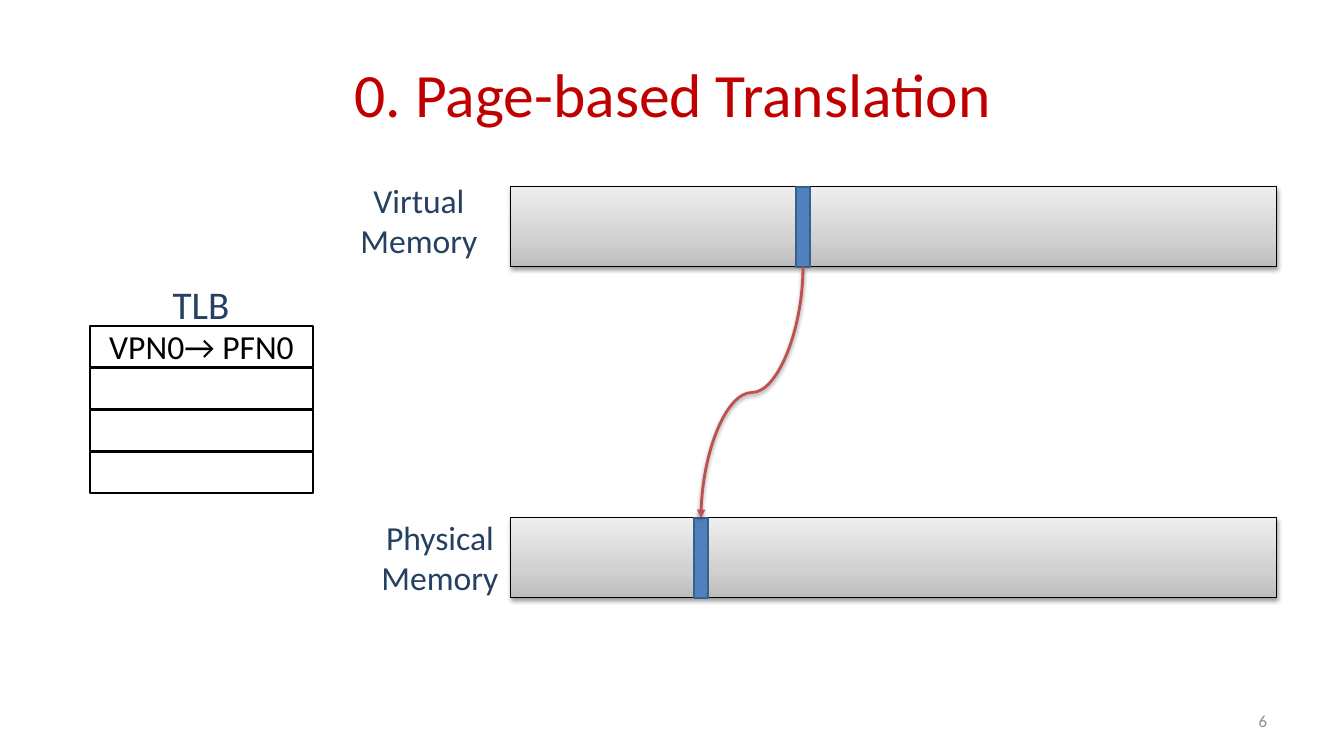
from copy import deepcopy

from lxml.etree import SubElement
from pptx import Presentation
from pptx.dml.color import RGBColor
from pptx.enum.shapes import MSO_CONNECTOR, MSO_SHAPE
from pptx.enum.text import MSO_ANCHOR, MSO_AUTO_SIZE, PP_ALIGN
from pptx.oxml.ns import qn
from pptx.util import Emu, Pt

EMU_PER_PX = 914400 / 100.8
FONT = "Calibri"
RED = RGBColor(0xC0, 0x00, 0x00)
NAVY = RGBColor(0x25, 0x40, 0x61)
GRAY = RGBColor(0x8C, 0x8C, 0x8C)
BLACK = RGBColor(0x00, 0x00, 0x00)
WHITE = RGBColor(0xFF, 0xFF, 0xFF)
BLUE = RGBColor(0x4F, 0x81, 0xBD)
BLUE_EDGE = RGBColor(0x3A, 0x5F, 0x8C)
ARROW_RED = RGBColor(0xC0, 0x50, 0x4D)
MEMORY_STOPS = [
    (0, RGBColor(0xBD, 0xBD, 0xBD)),
    (0.35, RGBColor(0xD1, 0xD1, 0xD1)),
    (1, RGBColor(0xEE, 0xEE, 0xEE)),
]


def px(*lengths):
    return [Emu(round(length * EMU_PER_PX)) for length in lengths]


class TranslationSlide:
    """Draws the parts of an address translation diagram on one slide."""

    def __init__(self, deck):
        self.slide = deck.slides.add_slide(deck.slide_layouts[5])
        self.shapes = self.slide.shapes

    def add_words(self, holder, text, size, color, align=PP_ALIGN.CENTER, anchor=MSO_ANCHOR.MIDDLE):
        frame = holder.text_frame
        frame.word_wrap = True
        frame.auto_size = MSO_AUTO_SIZE.NONE
        frame.vertical_anchor = anchor
        paragraph = frame.paragraphs[0]
        paragraph.alignment = align
        run = paragraph.add_run()
        run.text = text
        run.font.name = FONT
        run.font.size = Pt(size)
        run.font.color.rgb = color

    def title(self, text, *box):
        heading = self.shapes.title
        heading.left, heading.top, heading.width, heading.height = px(*box)
        self.add_words(heading, text, 44, RED)

    def label(self, text, box, size=24, color=NAVY, **layout):
        self.add_words(self.shapes.add_textbox(*px(*box)), text, size, color, **layout)

    def block(self, box, fill, edge, weight=2):
        block = self.shapes.add_shape(MSO_SHAPE.RECTANGLE, *px(*box))
        block.shadow.inherit = False
        block.fill.solid()
        block.fill.fore_color.rgb = fill
        block.line.color.rgb = edge
        block.line.width = Pt(weight)
        return block

    def memory(self, *box):
        bar = self.block(box, WHITE, BLACK, 0.75)
        bar.fill.gradient()
        bar.fill.gradient_angle = 90
        properties = bar._element.spPr
        stop_list = properties.find(qn("a:gradFill")).find(qn("a:gsLst"))
        stop_list.append(deepcopy(stop_list[0]))
        for stop, (position, color) in zip(bar.fill.gradient_stops, MEMORY_STOPS):
            stop.position = position
            stop.color.rgb = color
        self.cast_shadow(properties.find(qn("a:effectLst")))

    def cast_shadow(self, effects):
        shadow = SubElement(effects, qn("a:outerShdw"), blurRad=str(Pt(3.1)), dist=str(Pt(1.6)),
                            dir="5400000", rotWithShape="0")
        color = SubElement(shadow, qn("a:srgbClr"), val=str(BLACK))
        SubElement(color, qn("a:alpha"), val="38000")

    def mapping(self, start_x, start_y, end_x, end_y):
        middle_x, middle_y = (start_x + end_x) / 2, (start_y + end_y) / 2
        half_length, half_spread = (end_y - start_y) / 2, (start_x - end_x) / 2
        arrow = self.shapes.add_connector(
            MSO_CONNECTOR.CURVE,
            *px(middle_x - half_length, middle_y - half_spread,
                middle_x + half_length, middle_y + half_spread))
        arrow.line.color.rgb = ARROW_RED
        arrow.line.width = Pt(2)
        properties = arrow._element.spPr
        properties.find(qn("a:xfrm")).set("rot", "5400000")
        SubElement(properties.find(qn("a:ln")), qn("a:tailEnd"), type="triangle")
        self.cast_shadow(SubElement(properties, qn("a:effectLst")))


def main():
    deck = Presentation()
    deck.slide_width, deck.slide_height = px(1344, 756)
    diagram = TranslationSlide(deck)
    diagram.title("0. Page-based Translation", 68, 30, 1210, 126)

    bar_height, page_width = 80, 14
    virtual_top, physical_top = 187, 518
    virtual_page, physical_page = 796, 694
    for top, page in ((virtual_top, virtual_page), (physical_top, physical_page)):
        diagram.memory(511, top, 766, bar_height)
        diagram.block((page, top, page_width, bar_height), BLUE, BLUE_EDGE)
    diagram.mapping(virtual_page + page_width // 2, virtual_top + bar_height,
                    physical_page + page_width // 2, physical_top)
    diagram.label("Virtual Memory", (328, 175, 182, 92), anchor=MSO_ANCHOR.TOP)
    diagram.label("Physical Memory", (349, 512, 182, 92), anchor=MSO_ANCHOR.TOP)

    diagram.label("TLB", (125, 275, 152, 57), size=28, anchor=MSO_ANCHOR.TOP)
    entries = [diagram.block((90, 326 + 42 * row, 223, 41), WHITE, BLACK) for row in range(4)]
    diagram.add_words(entries[0], "VPN0→ PFN0", 24, BLACK)

    diagram.label("6", (964, 701, 313, 40), size=12, color=GRAY, align=PP_ALIGN.RIGHT)
    deck.save("out.pptx")


if __name__ == "__main__":
    main()
